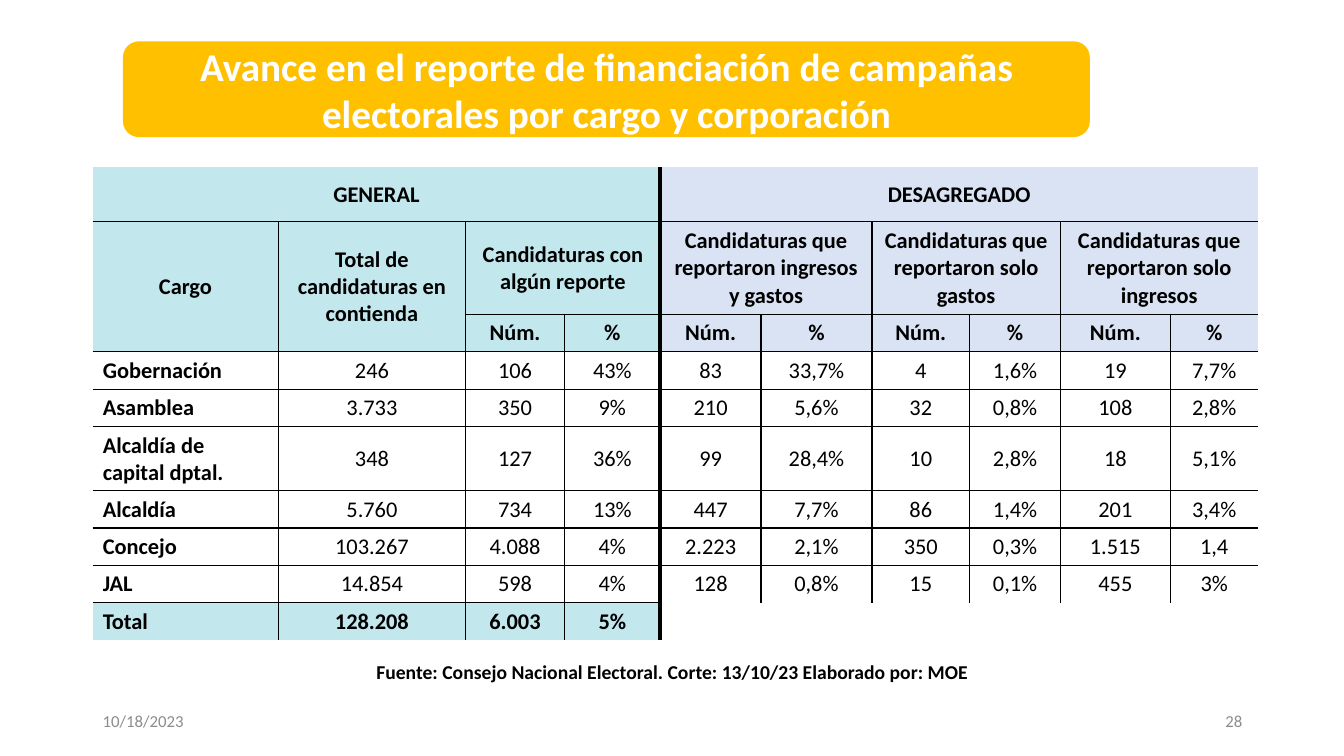
import pptx
import pptx.util
from lxml import etree
from pptx.dml.color import RGBColor
from pptx.enum.shapes import MSO_SHAPE
from pptx.enum.text import MSO_ANCHOR, PP_ALIGN
from pptx.oxml.ns import qn

FONT = "Calibri"
BLACK = RGBColor(0x00, 0x00, 0x00)
WHITE = RGBColor(0xFF, 0xFF, 0xFF)
GREY = RGBColor(0x8C, 0x8C, 0x8C)
AMBER = RGBColor(0xFF, 0xC0, 0x00)
AQUA = RGBColor(0xC2, 0xE7, 0xED)
LAVENDER = RGBColor(0xDA, 0xE3, 0xF3)

SLIDE_WIDTH = pptx.util.Inches(13.33)
SLIDE_HEIGHT = pptx.util.Inches(7.5)
NO_GRID_STYLE = "{2D5ABB26-0587-4C30-8999-92F81FD0307C}"

# Table grid, in percent of the slide's width and height
COLUMN_SHARES = [13.8, 13.95, 7.35, 7.13, 7.5, 8.25, 7.28, 6.75, 8.18, 6.53]
ROW_SHARES = [7.2, 12.27] + [4.95] * 3 + [8.47] + [4.95] * 4
HEADER_ROWS = 3
TOTAL_ROW = len(ROW_SHARES) - 1
BREAKDOWN_COLUMN = 4  # first column of DESAGREGADO

# Headings: row, column, rows spanned, columns spanned, text
HEADINGS = [
    (0, 0, 1, 4, "GENERAL"),
    (0, 4, 1, 6, "DESAGREGADO"),
    (1, 0, 2, 1, "Cargo"),
    (1, 1, 2, 1, "Total de candidaturas en contienda"),
    (1, 2, 1, 2, "Candidaturas con algún reporte"),
    (1, 4, 1, 2, "Candidaturas que reportaron ingresos y gastos"),
    (1, 6, 1, 2, "Candidaturas que reportaron solo gastos"),
    (1, 8, 1, 2, "Candidaturas que reportaron solo ingresos"),
] + [(2, col, 1, 1, "%" if col % 2 else "Núm.") for col in range(2, 10)]

RESULTS = [
    ["Gobernación", "246", "106", "43%", "83", "33,7%", "4", "1,6%", "19", "7,7%"],
    ["Asamblea", "3.733", "350", "9%", "210", "5,6%", "32", "0,8%", "108", "2,8%"],
    ["Alcaldía de capital dptal.", "348", "127", "36%", "99", "28,4%", "10", "2,8%", "18", "5,1%"],
    ["Alcaldía", "5.760", "734", "13%", "447", "7,7%", "86", "1,4%", "201", "3,4%"],
    ["Concejo", "103.267", "4.088", "4%", "2.223", "2,1%", "350", "0,3%", "1.515", "1,4"],
    ["JAL", "14.854", "598", "4%", "128", "0,8%", "15", "0,1%", "455", "3%"],
    ["Total", "128.208", "6.003", "5%"],
]


def across(percent):
    return round(SLIDE_WIDTH * percent / 100)


def down(percent):
    return round(SLIDE_HEIGHT * percent / 100)


def area(left, top, width, height):
    return across(left), down(top), across(width), down(height)


def write(frame, text, size, color, bold=False, align=PP_ALIGN.LEFT):
    paragraph = frame.paragraphs[0]
    paragraph.alignment = align
    run = paragraph.add_run()
    run.text = text
    run.font.name = FONT
    run.font.size = pptx.util.Pt(size)
    run.font.bold = bold
    run.font.color.rgb = color


def add_label(slide, place, text, size, color, anchor, **style):
    frame = slide.shapes.add_textbox(*place).text_frame
    frame.word_wrap = True
    frame.vertical_anchor = anchor
    write(frame, text, size, color, **style)


def add_title(slide, place, text):
    banner = slide.shapes.add_shape(MSO_SHAPE.ROUNDED_RECTANGLE, *place)
    banner.shadow.inherit = False
    banner.fill.solid()
    banner.fill.fore_color.rgb = AMBER
    banner.line.fill.background()
    banner.text_frame.word_wrap = True
    banner.text_frame.vertical_anchor = MSO_ANCHOR.MIDDLE
    write(banner.text_frame, text, 28, WHITE, bold=True, align=PP_ALIGN.CENTER)


def vertical_rule(row, edge):
    """Width in points of the rule on the left of column number edge."""
    if edge in (0, len(COLUMN_SHARES)):
        return 0
    if edge == BREAKDOWN_COLUMN:
        return 3
    return 0 if row == TOTAL_ROW and edge > BREAKDOWN_COLUMN else 1


def horizontal_rule(edge, col):
    """Width in points of the rule above row number edge."""
    if edge in (0, len(ROW_SHARES)):
        return 0
    return 0 if edge == TOTAL_ROW and col >= BREAKDOWN_COLUMN else 1


def draw_borders(cell, row, col):
    next_row = row + (cell.span_height if cell.is_merge_origin else 1)
    next_col = col + (cell.span_width if cell.is_merge_origin else 1)
    widths = {
        "a:lnL": vertical_rule(row, col),
        "a:lnR": vertical_rule(row, next_col),
        "a:lnT": horizontal_rule(row, col),
        "a:lnB": horizontal_rule(next_row, col),
    }
    properties = cell._tc.get_or_add_tcPr()
    for side, width in widths.items():
        border = etree.SubElement(properties, qn(side), w=str(pptx.util.Pt(width)))
        if width:
            fill = etree.SubElement(border, qn("a:solidFill"))
            etree.SubElement(fill, qn("a:srgbClr"), val=str(BLACK))
        else:
            etree.SubElement(border, qn("a:noFill"))


def fill_cell(cell, row, col):
    shaded = row < HEADER_ROWS or (row == TOTAL_ROW and col < BREAKDOWN_COLUMN)
    if shaded:
        cell.fill.solid()
        cell.fill.fore_color.rgb = AQUA if col < BREAKDOWN_COLUMN else LAVENDER
    else:
        cell.fill.background()


def add_results_table(slide, left, top):
    frame = slide.shapes.add_table(
        len(ROW_SHARES), len(COLUMN_SHARES),
        *area(left, top, sum(COLUMN_SHARES), sum(ROW_SHARES)))
    results = frame.table
    results.first_row = results.horz_banding = False
    results._tbl.tblPr.find(qn("a:tableStyleId")).text = NO_GRID_STYLE
    for column, share in zip(results.columns, COLUMN_SHARES):
        column.width = across(share)
    for line, share in zip(results.rows, ROW_SHARES):
        line.height = down(share)

    # Headings, merged where they span
    for row, col, height, width, text in HEADINGS:
        heading = results.cell(row, col)
        if height * width > 1:
            heading.merge(results.cell(row + height - 1, col + width - 1))
        write(heading.text_frame, text, 16, BLACK, bold=True, align=PP_ALIGN.CENTER)

    # Figures by office
    for row, figures in enumerate(RESULTS, HEADER_ROWS):
        for col, text in enumerate(figures):
            write(results.cell(row, col).text_frame, text, 16, BLACK,
                  bold=col == 0 or row == TOTAL_ROW,
                  align=PP_ALIGN.CENTER if col else PP_ALIGN.LEFT)

    # Rules and shading
    for row in range(len(ROW_SHARES)):
        for col in range(len(COLUMN_SHARES)):
            cell = results.cell(row, col)
            if not cell.is_spanned:
                draw_borders(cell, row, col)
            fill_cell(cell, row, col)
            if row < HEADER_ROWS or col:
                cell.vertical_anchor = MSO_ANCHOR.MIDDLE
            if not cell.text_frame.text:  # keeps empty cells from stretching the row
                etree.SubElement(cell.text_frame.paragraphs[0]._p,
                                 qn("a:endParaRPr"), sz="1600")


def main():
    deck = pptx.Presentation()
    deck.slide_width, deck.slide_height = SLIDE_WIDTH, SLIDE_HEIGHT
    slide = deck.slides.add_slide(deck.slide_layouts[6])

    # Footer
    add_label(slide, area(6.9, 92.67, 22.5, 5.33), "10/18/2023", 12, GREY, MSO_ANCHOR.MIDDLE)
    add_label(slide, area(70.67, 92.67, 22.5, 5.33), "28", 12, GREY, MSO_ANCHOR.MIDDLE,
              align=PP_ALIGN.RIGHT)

    # Table and its source
    add_results_table(slide, 6.9, 22.13)
    add_label(slide, area(18.98, 86.67, 62.11, 4.53),
              "Fuente: Consejo Nacional Electoral. Corte: 13/10/23 Elaborado por: MOE",
              14, BLACK, MSO_ANCHOR.TOP, bold=True, align=PP_ALIGN.CENTER)

    # Title
    add_title(slide, area(9.15, 5.47, 71.94, 12.67),
              "Avance en el reporte de financiación de campañas "
              "electorales por cargo y corporación")

    deck.save("out.pptx")


if __name__ == "__main__":
    main()
